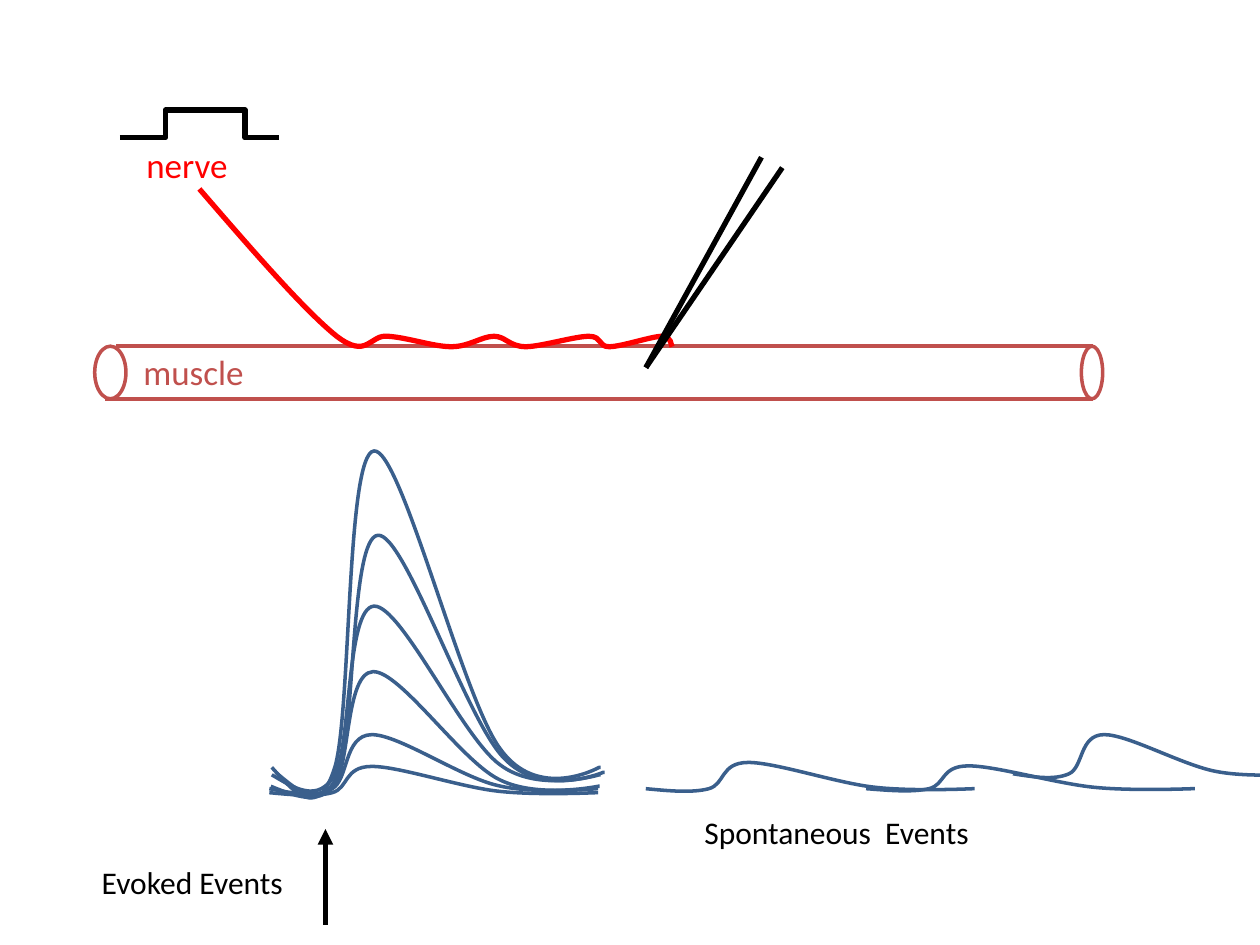
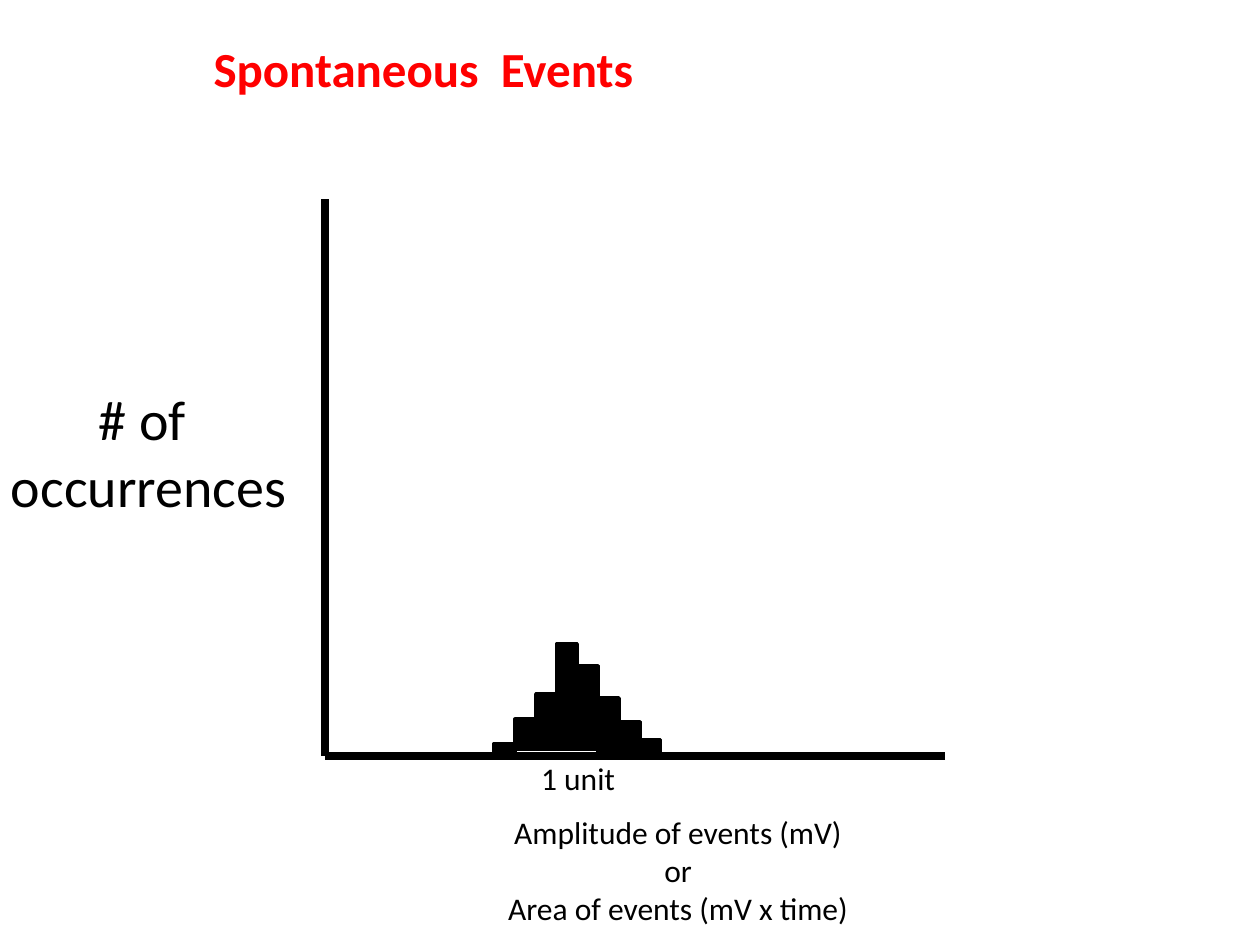
from lxml import etree
from pptx import Presentation
from pptx.dml.color import RGBColor
from pptx.enum.shapes import MSO_CONNECTOR as Link, MSO_SHAPE as Shape
from pptx.enum.text import MSO_ANCHOR as Anchor, MSO_AUTO_SIZE as Fit, PP_ALIGN as Align
from pptx.oxml.ns import qn
from pptx.util import Cm, Pt

BLACK = RGBColor(0x00, 0x00, 0x00)
RED = RGBColor(0xFF, 0x00, 0x00)
BRICK = RGBColor(0xC0, 0x50, 0x4D)
BLUE = RGBColor(0x3A, 0x5F, 0x8C)
FONT = "Calibri"

# Each curve is a start point followed by Bezier triples.
NERVE = [
    (0, 0),
    (1.07, 1.24), (2.13, 2.46), (2.77, 2.97),
    (3.4, 3.45), (3.43, 2.92), (3.81, 2.97),
    (4.22, 3), (4.72, 3.18), (5.08, 3.18),
    (5.44, 3.18), (5.69, 2.97), (5.94, 2.97),
    (6.17, 2.97), (6.25, 3.18), (6.58, 3.18),
    (6.88, 3.18), (7.57, 2.97), (7.85, 2.97),
    (8.13, 2.97), (8.03, 3.18), (8.26, 3.18),
    (8.51, 3.18), (9.12, 2.97), (9.32, 2.97),
    (9.53, 2.97), (9.5, 3.15), (9.53, 3.18),
]
# One event: x in cm, y as a share of the peak height.
EVENT = [
    (0, 0),
    (0.46, 0.08), (0.93, 0.17), (1.27, 0),
    (1.6, -0.17), (1.5, -0.99), (2.06, -1),
    (2.6, -1.01), (3.84, -0.22), (4.6, -0.06),
    (5.36, 0.11), (6.6, 0), (6.6, 0),
]
TAIL = [(6.6, 0), (6.63, 0), (6.63, 0)]
# Events: x offset, y offset, peak height, width scale.
EVOKED = [
    (0.03, 0.38, 2.31, 1), (0, 0.43, 1.09, 1), (0.05, 0, 6.38, 1),
    (0.13, 0.1, 4.78, 1), (0, 0.51, 0.53, 1), (0.05, 0.15, 3.4, 1),
]
SPONTANEOUS = [(0, 0, 0.53, 1), (4.44, 0, 0.46, 1), (7.4, -0.3, 0.79, 0.89)]
# Histogram bars: gap above the axis, height.
BARS = [
    (0, 0.25), (0.13, 0.61), (0.13, 1.12), (0.13, 2.13),
    (0.14, 1.68), (0.05, 1.12), (0.08, 0.61), (0.1, 0.23),
]
STEP = 0.42


def write(frame, text, size, color, align=Align.LEFT, bold=False):
    frame.text = text
    frame.word_wrap = False
    for par in frame.paragraphs:
        par.alignment = align
        font = par.font
        font.name, font.size, font.bold = FONT, Pt(size), bold
        font.color.rgb = color


def label(slide, x, y, w, h, text, size=18, color=BLACK, align=Align.LEFT):
    frame = slide.shapes.add_textbox(Cm(x), Cm(y), Cm(w), Cm(h)).text_frame
    write(frame, text, size, color, align)
    frame.auto_size = Fit.SHAPE_TO_FIT_TEXT


def outline(item, color, width):
    item.line.color.rgb = color
    item.line.width = Pt(width)


def line(slide, x1, y1, x2, y2, color=BLACK, width=3, kind=Link.STRAIGHT):
    link = slide.shapes.add_connector(kind, Cm(x1), Cm(y1), Cm(x2), Cm(y2))
    outline(link, color, width)
    etree.SubElement(link._element.spPr, qn("a:effectLst"))
    return link


def block(slide, kind, x, y, w, h, color, fill=None):
    item = slide.shapes.add_shape(kind, Cm(x), Cm(y), Cm(w), Cm(h))
    item.shadow.inherit = False
    outline(item, color, 2)
    if fill is None:
        item.fill.background()
    else:
        item.fill.solid()
        item.fill.fore_color.rgb = fill


def trace(points, steps=16):
    """List dots along the Bezier chain, to find the box that holds it."""
    dots = [points[0]]
    for i in range(0, len(points) - 1, 3):
        quad = points[i:i + 4]
        for n in range(1, steps + 1):
            t = n / steps
            parts = ((1 - t) ** 3, 3 * t * (1 - t) ** 2, 3 * t * t * (1 - t), t ** 3)
            dots.append(tuple(sum(k * p[axis] for k, p in zip(parts, quad))
                              for axis in (0, 1)))
    return dots


def curve(slide, x, y, points, color, width, tail=()):
    """Draw a Bezier chain and the straight tail after it."""
    dots = [(Cm(x + dx), Cm(y + dy)) for dx, dy in trace(points) + list(tail)]
    pen = slide.shapes.build_freeform(*dots[0])
    pen.add_line_segments(dots[1:], close=False)
    item = pen.convert_to_shape()
    item.fill.background()
    item.shadow.inherit = False
    outline(item, color, width)

    route = next(item._element.iter(qn("a:pathLst")))[0]
    for step in list(route):
        route.remove(step)

    def add(tag, group):
        step = etree.SubElement(route, qn(tag))
        for dx, dy in group:
            etree.SubElement(step, qn("a:pt"), x=str(Cm(x + dx) - item.left),
                             y=str(Cm(y + dy) - item.top))

    add("a:moveTo", points[:1])
    for i in range(1, len(points), 3):
        add("a:cubicBezTo", points[i:i + 3])
    for point in tail:
        add("a:lnTo", [point])


def events(slide, x, y, rows):
    for dx, dy, peak, scale in rows:
        points, tail = ([(px * scale, py * peak) for px, py in part]
                        for part in (EVENT, TAIL))
        curve(slide, x + dx, y + dy, points, BLUE, 2, tail)


def muscle(slide, x, y, w, h):
    block(slide, Shape.OVAL, x, y, 0.63, h, BRICK)
    line(slide, x + 0.43, y, x + w - 0.2, y, BRICK, 2)
    line(slide, x + 0.21, y + h, x + w - 0.2, y + h, BRICK, 2)
    block(slide, Shape.OVAL, x + w - 0.43, y, 0.43, h, BRICK)


def nerve(slide, x, y):
    curve(slide, x, y, NERVE, RED, 3)
    label(slide, x - 1.38, y + 3.13, 2.95, 1.09, "muscle", 20, BRICK)
    label(slide, x - 1.32, y - 1.04, 2.39, 1.09, "nerve", 20, RED)


def pulse(slide, x, y, w, h):
    mid = x + 1.83
    line(slide, x, y + h, mid, y, kind=Link.ELBOW)
    line(slide, mid, y, x + w, y + h, kind=Link.ELBOW)


def probe(slide, x, y):
    """Draw the recording electrode with its tip at x, y."""
    for dx, dy in ((2.33, 4.24), (2.75, 4.03)):
        line(slide, x + dx, y - dy, x, y)


def evoked(slide, x, y):
    events(slide, x, y, EVOKED)
    arrow = line(slide, x + 1.13, y + 3.17, x + 1.13, y + 1.24)
    etree.SubElement(arrow.line._get_or_add_ln(), qn("a:tailEnd"), type="triangle")
    label(slide, x - 3.63, y + 1.8, 4.19, 1.02, "Evoked Events")


def spontaneous(slide, x, y):
    events(slide, x, y, SPONTANEOUS)
    label(slide, x + 0.93, y + 0.36, 5.89, 1.02, "Spontaneous  Events")


def heading(slide, x, y, w, h, text):
    title = slide.shapes.title
    title.left, title.top, title.width, title.height = Cm(x), Cm(y), Cm(w), Cm(h)
    frame = title.text_frame
    write(frame, text, 28, RED, bold=True)
    frame.vertical_anchor = Anchor.TOP
    frame.auto_size = Fit.NONE


def histogram(slide, x, y, w, h):
    """Draw bars and axes in a box whose bottom left corner is the origin."""
    base = y + h
    for i, (gap, high) in enumerate(BARS):
        block(slide, Shape.RECTANGLE, x + 3.4 + i * STEP, base - gap - high,
              STEP, high, BLACK, BLACK)
    line(slide, x, y, x, base, width=4.5)
    line(slide, x + w, base, x, base, width=4.5)
    label(slide, x - 6.62, y + 3.6, 6.12, 3, "# of \noccurrences", 32, align=Align.CENTER)
    label(slide, x + 3.39, base + 1.03, 7.44, 2.57,
          "Amplitude of events (mV)\nor\nArea of events (mV x time)", align=Align.CENTER)
    label(slide, x + 4.1, base - 0.06, 2.03, 1.02, "1 unit")


def setup(deck):
    slide = deck.slides.add_slide(deck.slide_layouts[6])
    muscle(slide, 1.91, 6.98, 20.32, 1.06)
    nerve(slide, 4.02, 3.81)
    pulse(slide, 2.42, 2.22, 3.21, 0.56)
    evoked(slide, 5.43, 15.47)
    probe(slide, 13.02, 7.41)
    spontaneous(slide, 13.02, 15.9)


def counts(deck):
    slide = deck.slides.add_slide(deck.slide_layouts[5])
    heading(slide, 4.05, 0.64, 9.07, 1.45, "Spontaneous  Events")
    histogram(slide, 6.56, 4.02, 12.49, 11.22)


def main():
    deck = Presentation()
    deck.slide_width, deck.slide_height = Cm(25.4), Cm(19.05)
    setup(deck)
    counts(deck)
    deck.save("out.pptx")


if __name__ == "__main__":
    main()
